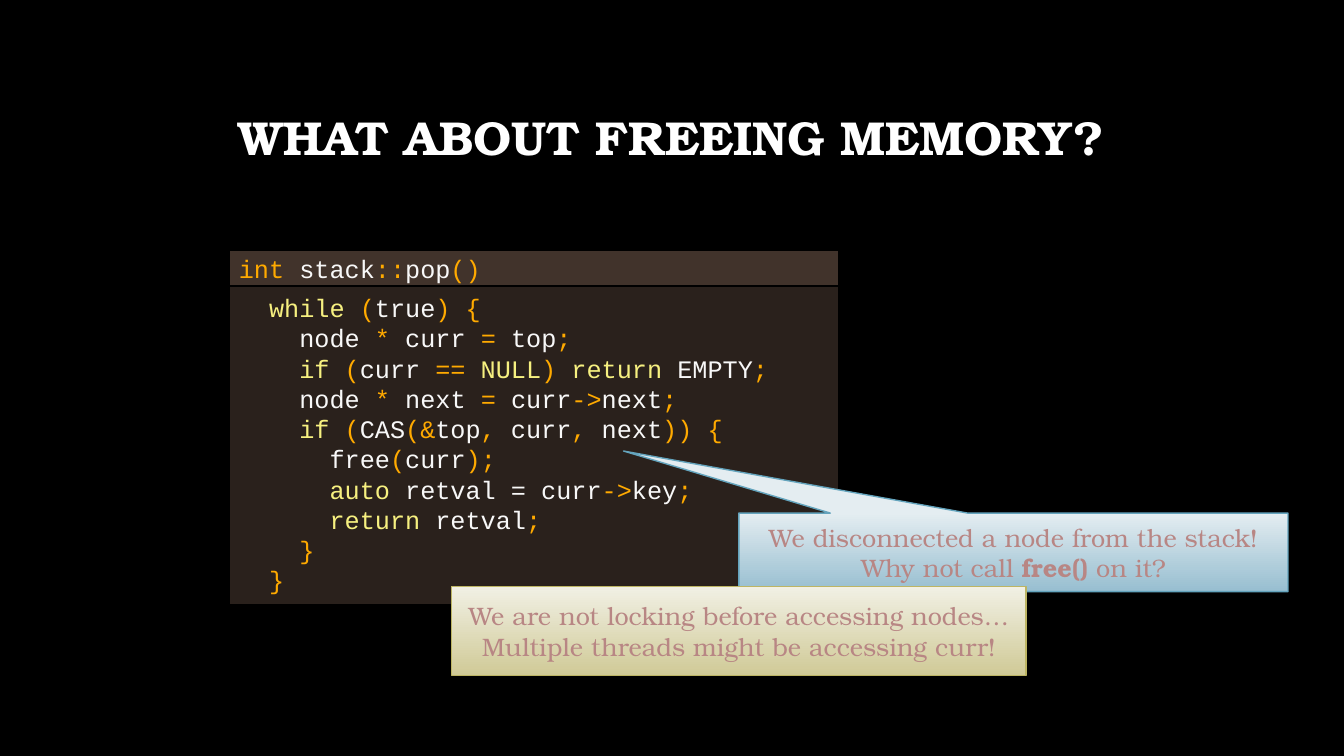
from dataclasses import dataclass
from itertools import groupby

from pptx import Presentation
from pptx.dml.color import RGBColor
from pptx.enum.shapes import MSO_SHAPE
from pptx.enum.text import MSO_ANCHOR, PP_ALIGN
from pptx.util import Cm, Pt

RECTANGLE = MSO_SHAPE.RECTANGLE
CALLOUT = MSO_SHAPE.RECTANGULAR_CALLOUT
TOP, MIDDLE = MSO_ANCHOR.TOP, MSO_ANCHOR.MIDDLE
LEFT, CENTER = PP_ALIGN.LEFT, PP_ALIGN.CENTER
TITLE_ONLY = 5


@dataclass(frozen=True)
class Theme:
    serif: str = "TeX Gyre Bonum"
    mono: str = "Courier New"
    title_size: float = 34
    text_size: float = 18
    code_pitch: float = 21.6
    background: str = "000000"
    title: str = "FFFFFF"
    note_text: str = "B88684"
    code_header: str = "41332B"
    code_body: str = "2A211C"
    keyword: str = "F6F080"
    symbol: str = "FFAA00"
    name: str = "F8F8F8"
    blue: tuple = ("E4EDF1", "97BED0", "64A4BD")
    sand: tuple = ("F1F0E4", "D0CA97", "BDB564")


KEYWORDS = {"while", "if", "return", "auto", "NULL"}
TYPES = {"int"}

HEADER = ["int stack::pop()"]
BODY = [
    "  while (true) {",
    "    node * curr = top;",
    "    if (curr == NULL) return EMPTY;",
    "    node * next = curr->next;",
    "    if (CAS(&top, curr, next)) {",
    "      free(curr);",
    "      auto |retval = curr|->key;",
    "      return retval;",
    "    }",
    "  }",
]


def character_kind(character):
    if character.isspace():
        return "space"
    return "word" if character.isalnum() else "symbol"


class SlideBuilder:
    def __init__(self, deck, theme):
        self.theme = theme
        self.page = deck.slides.add_slide(deck.slide_layouts[TITLE_ONLY])
        fill = self.page.background.fill
        fill.solid()
        fill.fore_color.rgb = RGBColor.from_string(theme.background)

    def style(self, font, face, size, colour):
        font.name = face
        font.size = Pt(size)
        font.color.rgb = RGBColor.from_string(colour)

    def title(self, text, left, top, width, height):
        box = self.page.shapes.title
        box.left, box.top, box.width, box.height = map(Cm, (left, top, width, height))
        box.text_frame.text = text
        box.text_frame.vertical_anchor = MIDDLE
        para = box.text_frame.paragraphs[0]
        para.alignment = CENTER
        para.line_spacing = 0.9
        self.style(para.font, self.theme.serif, self.theme.title_size, self.theme.title)
        para.font.bold = True

    def box(self, kind, place, outline, weight, anchor):
        box = self.page.shapes.add_shape(kind, *map(Cm, place))
        box.shadow.inherit = False
        box.line.color.rgb = RGBColor.from_string(outline)
        box.line.width = Pt(weight)
        box.text_frame.word_wrap = True
        box.text_frame.vertical_anchor = anchor
        return box

    def paragraphs(self, box, lines):
        frame = box.text_frame
        for index, line in enumerate(lines):
            yield line, frame.add_paragraph() if index else frame.paragraphs[0]

    def token_colour(self, token, kind):
        if token in KEYWORDS:
            return self.theme.keyword
        if kind == "symbol" or token in TYPES:
            return self.theme.symbol
        return self.theme.name

    def code_spans(self, line):
        for index, part in enumerate(line.split("|")):
            if index % 2:
                yield part, self.theme.name
                continue
            for kind, characters in groupby(part, character_kind):
                token = "".join(characters)
                yield token, self.token_colour(token, kind)

    def code(self, lines, place, fill, anchor):
        box = self.box(RECTANGLE, place, self.theme.background, 1.5, anchor)
        box.fill.solid()
        box.fill.fore_color.rgb = RGBColor.from_string(fill)
        box.text_frame.margin_top = Cm(0.16)
        for line, para in self.paragraphs(box, lines):
            para.alignment = LEFT
            para.line_spacing = Pt(self.theme.code_pitch)
            for token, colour in self.code_spans(line):
                span = para.add_run()
                span.text = token
                self.style(span.font, self.theme.mono, self.theme.text_size, colour)

    def note(self, kind, lines, place, palette, pointer=()):
        light, dark, outline = palette
        box = self.box(kind, place, outline, 1, MIDDLE)
        for index, value in enumerate(pointer):
            box.adjustments[index] = value
        box.fill.gradient()
        box.fill.gradient_angle = 270
        for stop, position, colour in zip(box.fill.gradient_stops, (0, 1), (light, dark)):
            stop.position = position
            stop.color.rgb = RGBColor.from_string(colour)
        for line, para in self.paragraphs(box, lines):
            para.alignment = CENTER
            self.style(para.font, self.theme.serif, self.theme.text_size, self.theme.note_text)
            for index, part in enumerate(line.split("|")):
                span = para.add_run()
                span.text = part
                if index % 2:
                    span.font.bold = True
                self.style(span.font, self.theme.serif, self.theme.text_size, self.theme.note_text)


def main():
    deck = Presentation()
    deck.slide_width, deck.slide_height = Cm(33.87), Cm(19.05)
    theme = Theme()
    slide = SlideBuilder(deck, theme)

    slide.title("WHAT ABOUT FREEING MEMORY?", 2.54, 1.7, 28.75, 3.68)
    slide.code(BODY, (5.77, 7.21, 15.37, 8.05), theme.code_body, TOP)
    slide.code(HEADER, (5.77, 6.3, 15.37, 0.91), theme.code_header, MIDDLE)
    slide.note(
        CALLOUT,
        ["We disconnected a node from the stack!", "Why not call |free()| on it?"],
        (18.62, 12.93, 13.84, 1.98),
        theme.blue,
        (-0.71, -1.29),
    )
    slide.note(
        RECTANGLE,
        ["We are not locking before accessing nodes…", "Multiple threads might be accessing curr!"],
        (11.38, 14.78, 14.48, 2.24),
        theme.sand,
    )
    deck.save("out.pptx")


if __name__ == "__main__":
    main()
